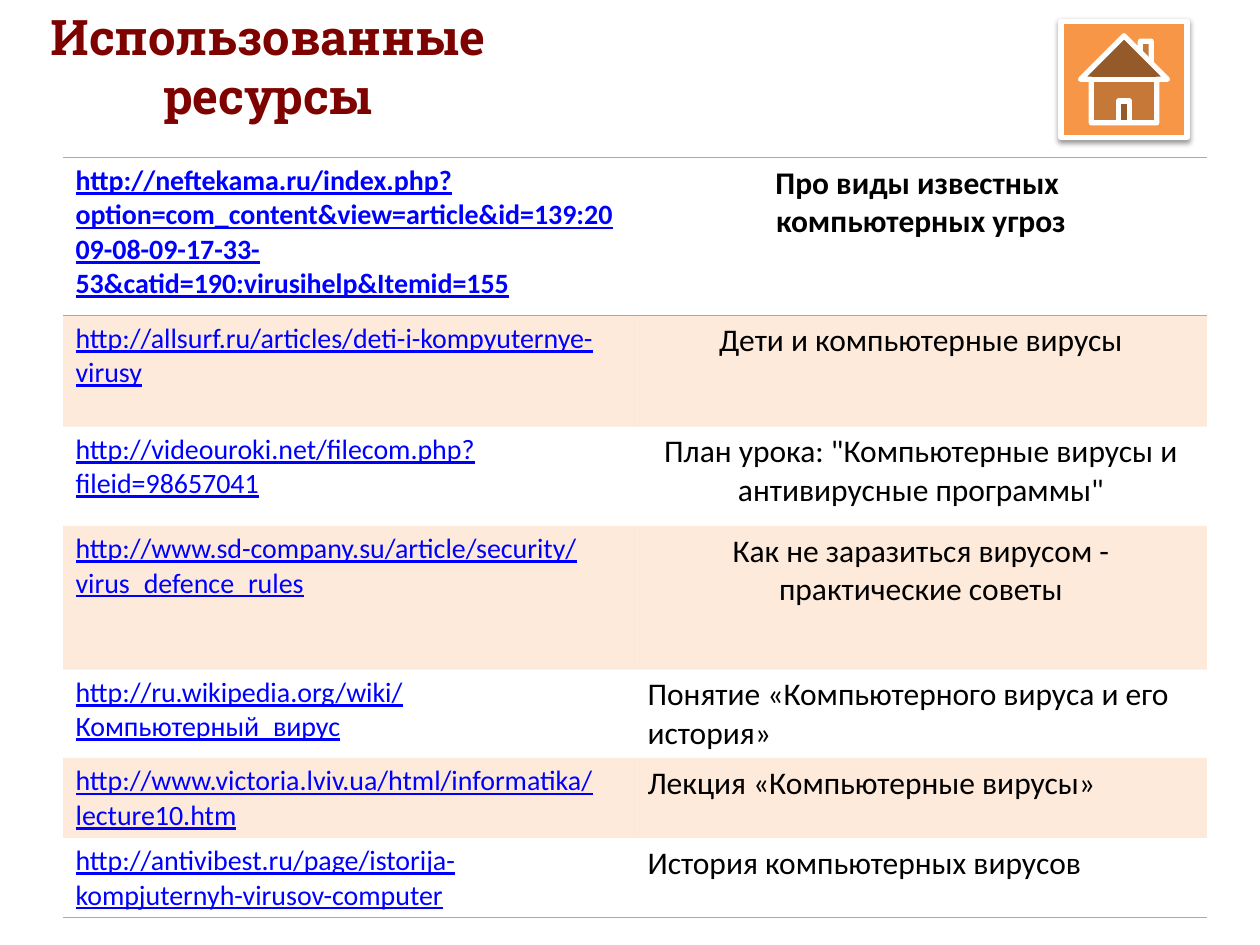
from pptx import Presentation
from pptx.dml.color import RGBColor
from pptx.enum.shapes import MSO_SHAPE as Shape
from pptx.enum.text import MSO_ANCHOR as Anchor, MSO_AUTO_SIZE as AutoSize, PP_ALIGN as Align
from pptx.oxml import parse_xml
from pptx.oxml.ns import nsdecls
from pptx.util import Cm, Pt

NO_STYLE = "{2D5ABB26-0587-4C30-8999-92F81FD0307C}"
RESOURCES = [
    ("http://neftekama.ru/index.php?option=com_content&view=article&id=139:2009-08-09-17-33-53&catid=190:virusihelp&Itemid=155",
     "Про виды известных \nкомпьютерных угроз", 3.18),
    ("http://allsurf.ru/articles/deti-i-kompyuternye-virusy",
     "Дети и компьютерные вирусы", 2.24),
    ("http://videouroki.net/filecom.php?fileid=98657041",
     "План урока: \"Компьютерные вирусы и антивирусные программы\"", 2),
    ("http://www.sd-company.su/article/security/virus_defence_rules",
     "Как не заразиться вирусом - практические советы", 2.9),
    ("http://ru.wikipedia.org/wiki/Компьютерный_вирус",
     "Понятие «Компьютерного вируса и его история»", 1.78),
    ("http://www.victoria.lviv.ua/html/informatika/lecture10.htm",
     "Лекция «Компьютерные вирусы»", 1.6),
    ("http://antivibest.ru/page/istorija-kompjuternyh-virusov-computer",
     "История компьютерных вирусов", 1.6),
]
CENTERED_ROWS = 4


def color(code):
    return RGBColor.from_string(code)


class ResourcePage:
    accent = "F79646"
    heading = "7E0300"
    link = "0000FF"
    ink = "000000"
    white = "FFFFFF"
    body_font = "Calibri"
    title_font = "Roboto Slab"

    def __init__(self, deck):
        self.page = deck.slides.add_slide(deck.slide_layouts[5])

    def add_text(self, para, text, size, code, font, bold=False, underline=False):
        for index, line in enumerate(text.split("\n")):
            if index:
                para.add_line_break()
            span = para.add_run()
            span.text = line
            span.font.name = font
            span.font.size = Pt(size)
            span.font.bold = bold
            span.font.underline = underline
            span.font.color.rgb = color(code)

    def title(self, text, left, top, width, height):
        box = self.page.shapes.title
        box.left, box.top, box.width, box.height = Cm(left), Cm(top), Cm(width), Cm(height)
        frame = box.text_frame
        frame.word_wrap = True
        frame.auto_size = AutoSize.SHAPE_TO_FIT_TEXT
        frame.vertical_anchor = Anchor.TOP
        para = frame.paragraphs[0]
        para.alignment = Align.CENTER
        self.add_text(para, text, 28, self.heading, self.title_font, bold=True)

    def home_button(self, left, top, width, height):
        button = self.page.shapes.add_shape(
            Shape.ACTION_BUTTON_HOME, Cm(left), Cm(top), Cm(width), Cm(height))
        button.fill.solid()
        button.fill.fore_color.rgb = color(self.accent)
        button.line.color.rgb = color(self.white)
        button.line.width = Pt(3)
        button.element.spPr.append(parse_xml(
            f'<a:effectLst {nsdecls("a")}><a:outerShdw blurRad="{Pt(3.1)}" dist="{Pt(1.6)}" '
            f'dir="5400000" rotWithShape="0"><a:srgbClr val="{self.ink}">'
            '<a:alpha val="38000"/></a:srgbClr></a:outerShdw></a:effectLst>'))

    def border(self, cell, side):
        cell._tc.get_or_add_tcPr().append(parse_xml(
            f'<a:{side} {nsdecls("a")} w="{Pt(1)}"><a:solidFill>'
            f'<a:srgbClr val="{self.accent}"/></a:solidFill></a:{side}>'))

    def shade(self, cell, banded):
        if not banded:
            cell.fill.background()
            return
        cell.fill.solid()
        cell.fill.fore_color.rgb = color(self.accent)
        tint = cell._tc.tcPr.xpath("./a:solidFill/a:srgbClr")[0]
        tint.append(parse_xml(f'<a:alpha {nsdecls("a")} val="20000"/>'))

    def table(self, resources, left, top, width):
        height = sum(resource[2] for resource in resources)
        holder = self.page.shapes.add_table(
            len(resources), 2, Cm(left), Cm(top), Cm(width), Cm(height))
        holder.element.xpath(".//a:tableStyleId")[0].text = NO_STYLE
        grid = holder.table
        grid.horz_banding = False
        last = len(resources) - 1
        for index, (address, topic, row_height) in enumerate(resources):
            grid.rows[index].height = Cm(row_height)
            link_cell, topic_cell = grid.rows[index].cells
            bold = index == 0
            self.add_text(link_cell.text_frame.paragraphs[0], address, 16, self.link,
                          self.body_font, bold, underline=True)
            para = topic_cell.text_frame.paragraphs[0]
            para.alignment = Align.CENTER if index < CENTERED_ROWS else Align.LEFT
            self.add_text(para, topic, 18, self.ink, self.body_font, bold)
            for cell in (link_cell, topic_cell):
                if index == 0:
                    self.border(cell, "lnT")
                if index in (0, last):
                    self.border(cell, "lnB")
                self.shade(cell, index % 2 == 1)


def main():
    deck = Presentation()
    deck.slide_width, deck.slide_height = Cm(25.4), Cm(19.05)
    resources = ResourcePage(deck)
    resources.title("Использованные ресурсы", 0, 0, 10.8, 2.64)
    resources.home_button(21.39, 0.43, 2.54, 2.34)
    resources.table(RESOURCES, 1.27, 3.18, 23.06)
    deck.save("out.pptx")


if __name__ == "__main__":
    main()
